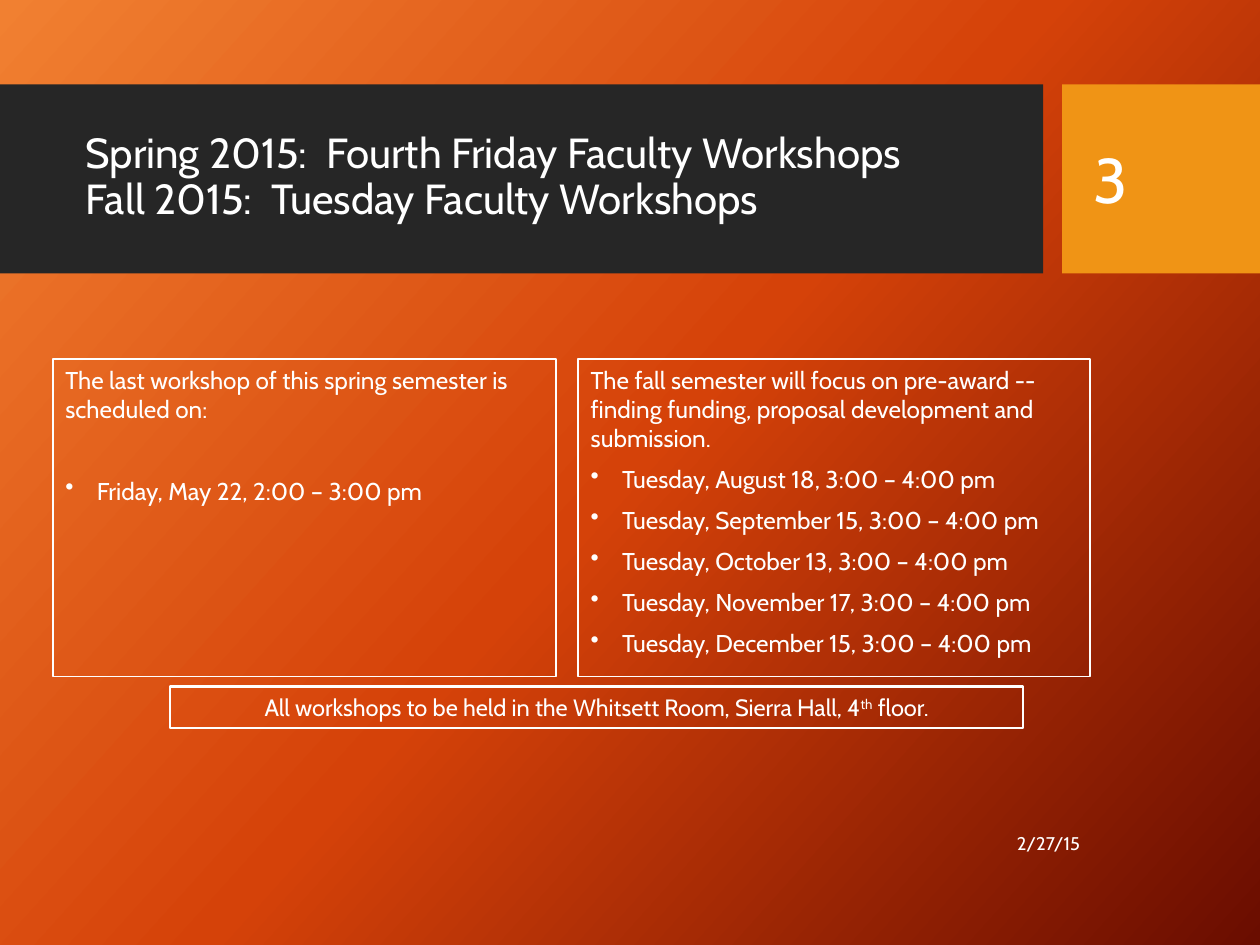
import copy
from dataclasses import dataclass

import pptx
import pptx.dml.color
import pptx.enum.shapes
import pptx.enum.text
import pptx.oxml
import pptx.oxml.ns
import pptx.util

ALIGN = pptx.enum.text.PP_ALIGN
ANCHOR = pptx.enum.text.MSO_ANCHOR
Pt = pptx.util.Pt


@dataclass(frozen=True)
class Theme:
    font: str = "Cabin"
    text: str = "FFFFFF"
    band: str = "262626"
    accent: str = "F09415"
    background: tuple = ((0, "F18031"), (0.5, "D54209"), (1, "6A0D00"))
    background_angle: int = 42
    title: float = 24
    number: float = 36
    body: float = 13.9
    note: float = 13.5
    date: float = 10.5


def color(value):
    return pptx.dml.color.RGBColor.from_string(value)


def apply(target, values):
    for name, value in values.items():
        setattr(target, name, value)


class SlideBuilder:
    """Draws on a grid of 100 columns by 75 rows."""

    COLUMNS, ROWS = 100, 75

    def __init__(self, presentation, theme):
        self.presentation = presentation
        self.theme = theme
        self.slide = presentation.slides.add_slide(presentation.slide_layouts[6])

    def place(self, left, top, width, height):
        column = self.presentation.slide_width / self.COLUMNS
        row = self.presentation.slide_height / self.ROWS
        return [round(value) for value in
                (left * column, top * row, width * column, height * row)]

    def background(self):
        fill = self.slide.background.fill
        fill.gradient()
        fill.gradient_angle = 360 - self.theme.background_angle
        first = fill.gradient_stops[0]._gs
        first.addnext(copy.deepcopy(first))
        for stop, (position, value) in zip(fill.gradient_stops, self.theme.background):
            stop.position = position
            stop.color.rgb = color(value)

    def rectangle(self, area, fill=None, line_width=None):
        shape = self.slide.shapes.add_shape(
            pptx.enum.shapes.MSO_SHAPE.RECTANGLE, *self.place(*area))
        shape.shadow.inherit = False
        if fill:
            shape.fill.solid()
            shape.fill.fore_color.rgb = color(fill)
        else:
            shape.fill.background()
        if line_width:
            shape.line.width = Pt(line_width)
            shape.line.color.rgb = color(self.theme.text)
        else:
            shape.line.fill.background()
        return shape

    def text(self, area, paragraphs, size, anchor=ANCHOR.MIDDLE, **formats):
        shape = self.slide.shapes.add_textbox(*self.place(*area))
        self.fill_text(shape, paragraphs, size, anchor, **formats)

    def panel(self, area, paragraphs, size, line_width=1, **formats):
        shape = self.rectangle(area, line_width=line_width)
        self.fill_text(shape, paragraphs, size, ANCHOR.TOP, **formats)

    def fill_text(self, shape, paragraphs, size, anchor, bullets=False, gap=10,
                  first_gap=None, **formats):
        """Each paragraph is a list of (text, baseline) runs; bullets start at the second."""
        frame = shape.text_frame
        apply(frame, {"word_wrap": True, "vertical_anchor": anchor})
        for index, runs in enumerate(paragraphs):
            paragraph = frame.add_paragraph() if index else frame.paragraphs[0]
            apply(paragraph, {"alignment": ALIGN.LEFT, **formats})
            for words, baseline in runs:
                run = paragraph.add_run()
                run.text = words
                apply(run.font, {"name": self.theme.font, "size": Pt(size)})
                run.font.color.rgb = color(self.theme.text)
                if baseline:
                    run.font._element.set("baseline", str(baseline * 1000))
            if bullets and index:
                space = first_gap if first_gap and index == 1 else gap
                apply(paragraph, {"line_spacing": 0.8, "space_before": Pt(space)})
                self.bullet(paragraph)

    def bullet(self, paragraph):
        properties = paragraph._p.get_or_add_pPr()
        indent = pptx.util.Inches(0.25)
        properties.set("marL", str(indent))
        properties.set("indent", str(-indent))
        properties.append(pptx.oxml.parse_xml(
            f'<a:buChar {pptx.oxml.ns.nsdecls("a")} char="•"/>'))


def plain(*lines):
    return [[(line, 0)] for line in lines]


def main():
    presentation = pptx.Presentation()
    apply(presentation, {"slide_width": pptx.util.Inches(10),
                         "slide_height": pptx.util.Inches(7.5)})
    theme = Theme()
    builder = SlideBuilder(presentation, theme)
    builder.background()

    band_top, band_height = 6.7, 15
    builder.rectangle((0, band_top, 82.8, band_height), theme.band)
    builder.rectangle((84.3, band_top, 15.7, band_height), theme.accent)
    builder.text((5.8, 8.2, 75.3, 11.8),
                 plain("Spring 2015:  Fourth Friday Faculty Workshops",
                       "Fall 2015:  Tuesday Faculty Workshops"),
                 theme.title, line_spacing=0.9)

    panel_top, panel_height = 28.5, 25.2
    builder.panel((4.2, panel_top, 39.9, panel_height),
                  plain("The last workshop of this spring semester is scheduled on:",
                        "Friday, May 22, 2:00 – 3:00 pm"),
                  theme.body, bullets=True, first_gap=33)
    fall_dates = ("August 18", "September 15", "October 13", "November 17", "December 15")
    builder.panel((45.9, panel_top, 40.6, panel_height),
                  plain("The fall semester will focus on pre-award -- finding funding, "
                        "proposal development and submission.",
                        *(f"Tuesday, {date}, 3:00 – 4:00 pm" for date in fall_dates)),
                  theme.body, bullets=True)

    builder.text((64.2, 64.9, 22.5, 4), plain("2/27/15"), theme.date, alignment=ALIGN.RIGHT)
    builder.text((85.8, 8.2, 12.7, 11.9), plain("3"), theme.number)
    builder.panel((13.5, 54.5, 67.7, 3.3),
                  [[("All workshops to be held in the Whitsett Room, Sierra Hall, 4", 0),
                    ("th", 30), (" floor.", 0)]],
                  theme.note, line_width=1.5, alignment=ALIGN.CENTER)

    presentation.save("out.pptx")


if __name__ == "__main__":
    main()
